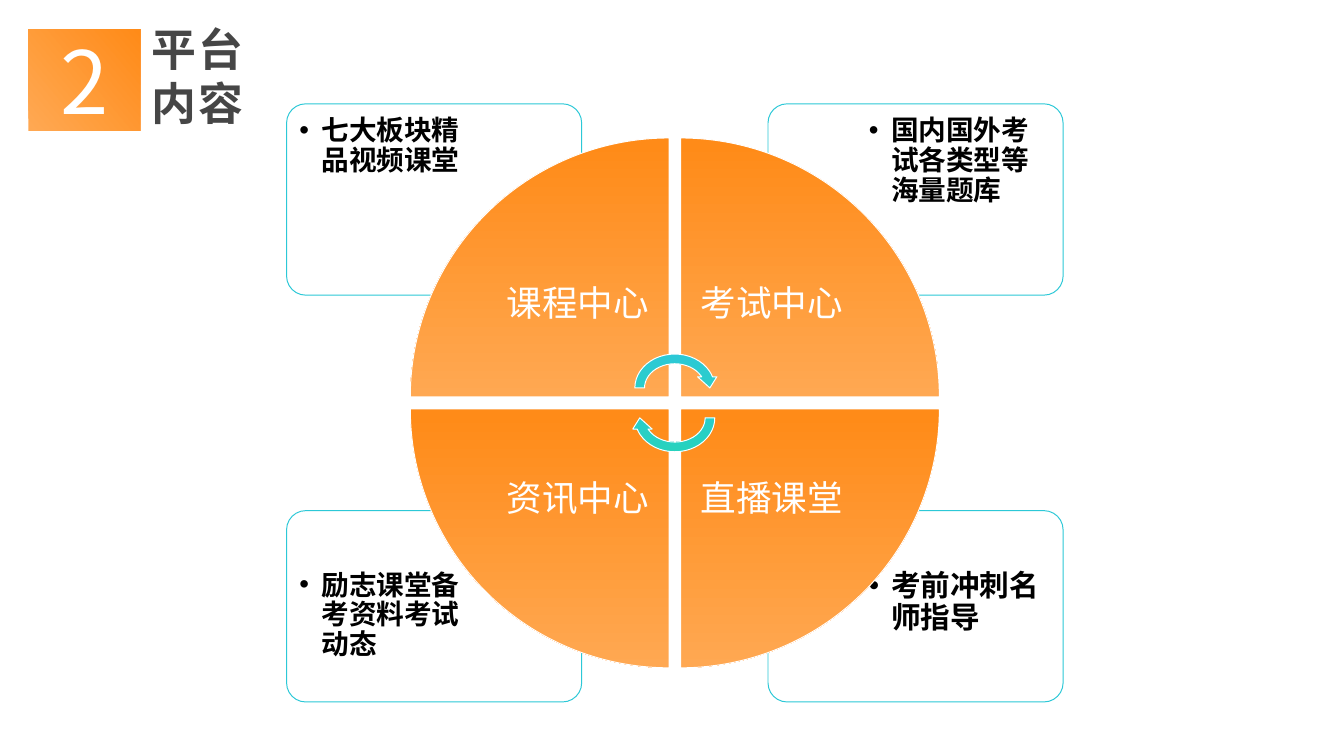
from dataclasses import dataclass
from itertools import product

from lxml import etree
from pptx import Presentation
from pptx.dml.color import RGBColor
from pptx.enum import shapes, text
from pptx.oxml import ns
from pptx.util import Inches, Pt


@dataclass(frozen=True)
class Theme:
    font: str = "Noto Sans CJK SC"
    white: str = "FFFFFF"
    black: str = "000000"
    heading: str = "464646"
    teal: str = "2CC8D7"
    green: str = "26D3BC"
    orange: str = "FF8B18"
    apricot: str = "FFA852"
    title_size: float = 45.4
    number_size: float = 88
    label_size: float = 36
    list_size: float = 28
    large_list_size: float = 30


THEME = Theme()
DOWN = 270
UP_RIGHT = 40
CARD_LEFTS, CARD_TOPS = (4.03, 10.8), (1.46, 7.18)
LIST_SHIFT_X, LIST_SHIFT_Y = (0.06, 1.3), (0.06, 0.73)
WEDGE_LEFTS, WEDGE_TOPS = (5.77, 9.57), (1.94, 5.75)
LABEL_SHIFT = (1.07, 0)
QUADRANTS = {
    (0, 0): ("课程中心", "七大板块精品视频课堂", THEME.list_size, 0),
    (0, 1): ("考试中心", "国内国外考试各类型等海量题库", THEME.list_size, 90),
    (1, 0): ("资讯中心", "励志课堂备考资料考试动态", THEME.list_size, 270),
    (1, 1): ("直播课堂", "考前冲刺名师指导", THEME.large_list_size, 180),
}


def apply(target, values):
    for name, value in values.items():
        setattr(target, name, value)


def place(shape, left, top, width, height):
    apply(shape, {"left": Inches(left), "top": Inches(top),
                  "width": Inches(width), "height": Inches(height)})


def write(shape, wording, size, color, insets, bold=False, line_spacing=1.0,
          align=text.PP_ALIGN.LEFT, anchor=text.MSO_ANCHOR.TOP, bullet=False):
    frame = shape.text_frame
    horizontal, vertical = (Inches(inset) for inset in insets)
    apply(frame, {"word_wrap": True, "auto_size": text.MSO_AUTO_SIZE.NONE,
                  "vertical_anchor": anchor,
                  "margin_left": horizontal, "margin_right": horizontal,
                  "margin_top": vertical, "margin_bottom": vertical})
    paragraph = frame.paragraphs[0]
    if bullet:
        add_bullet(paragraph)
    apply(paragraph, {"alignment": align, "line_spacing": line_spacing,
                      "space_before": Pt(0)})
    run = paragraph.add_run()
    run.text = wording
    apply(run.font, {"size": Pt(size), "bold": bold, "name": THEME.font})
    run.font.color.rgb = RGBColor.from_string(color)
    east_asian = etree.SubElement(run._r.get_or_add_rPr(), ns.qn("a:ea"))
    east_asian.set("typeface", THEME.font)
    return run


def add_bullet(paragraph):
    properties = paragraph._p.get_or_add_pPr()
    properties.set("marL", str(Inches(0.31)))
    properties.set("indent", str(-Inches(0.31)))
    etree.SubElement(properties, ns.qn("a:buFont")).set("typeface", "Arial")
    etree.SubElement(properties, ns.qn("a:buChar")).set("char", "•")


def add_preset(slide, preset, box, line=None, rotation=0):
    shape = slide.shapes.add_shape(preset, *map(Inches, box))
    shape.shadow.inherit = False
    shape.rotation = rotation
    if line:
        shape.line.color.rgb = RGBColor.from_string(line)
        shape.line.width = Pt(1)
    else:
        shape.line.fill.background()
    return shape


def fill_gradient(shape, colors, angle):
    shape.fill.gradient()
    shape.fill.gradient_angle = angle
    for stop, color, position in zip(shape.fill.gradient_stops, colors, (0.02, 1)):
        stop.color.rgb = RGBColor.from_string(color)
        stop.position = position
    shape._element.spPr.find(ns.qn("a:gradFill")).set("rotWithShape", "0")


def add_card(slide, placeholder, row, column):
    _, wording, size, _ = QUADRANTS[row, column]
    left, top = CARD_LEFTS[column], CARD_TOPS[row]
    card = add_preset(slide, shapes.MSO_SHAPE.ROUNDED_RECTANGLE,
                      (left, top, 4.15, 2.69), THEME.teal)
    card.adjustments[0] = 0.1
    card.fill.solid()
    card.fill.fore_color.rgb = RGBColor.from_string(THEME.white)
    place(placeholder, left + LIST_SHIFT_X[column], top + LIST_SHIFT_Y[row], 2.79, 1.9)
    write(placeholder, wording, size, THEME.black, (0.12, 0.12), bold=True,
          line_spacing=0.9, bullet=True)
    slide.shapes._spTree.append(placeholder._element)


def add_wedge(slide, row, column):
    wording, _, _, rotation = QUADRANTS[row, column]
    left, top = WEDGE_LEFTS[column], WEDGE_TOPS[row]
    wedge = add_preset(slide, shapes.MSO_SHAPE.PIE_WEDGE,
                       (left, top, 3.64, 3.64), THEME.white, rotation)
    fill_gradient(wedge, (THEME.orange, THEME.apricot), DOWN)
    label = slide.shapes.add_textbox(
        Inches(left + LABEL_SHIFT[column]), Inches(top + LABEL_SHIFT[row]),
        Inches(2.57), Inches(2.57))
    write(label, wording, THEME.label_size, THEME.white, (0.28, 0.28),
          line_spacing=0.9, align=text.PP_ALIGN.CENTER,
          anchor=text.MSO_ANCHOR.MIDDLE)


def add_cycle_arrow(slide, top, rotation):
    arrow = add_preset(slide, shapes.MSO_SHAPE.CIRCULAR_ARROW,
                       (8.86, top, 1.26, 1.09), THEME.white, rotation)
    fill_gradient(arrow, (THEME.teal, THEME.green), DOWN)


def add_heading(slide):
    title = slide.shapes.title
    place(title, 1.97, 0.22, 2.09, 1.69)
    run = write(title, "平台内容", THEME.title_size, THEME.heading,
                (0.16, 0.08), bold=True)
    run._r.get_or_add_rPr().set("spc", "240")
    number = add_preset(slide, shapes.MSO_SHAPE.RECTANGLE, (0.4, 0.41, 1.57, 1.43))
    fill_gradient(number, (THEME.apricot, THEME.orange), UP_RIGHT)
    write(number, "2", THEME.number_size, THEME.white, (0.09, 0.04),
          align=text.PP_ALIGN.CENTER, anchor=text.MSO_ANCHOR.MIDDLE)


def main():
    deck = Presentation()
    apply(deck, {"slide_width": Inches(18.9), "slide_height": Inches(10.63)})
    slide = deck.slides.add_slide(deck.slide_layouts.get_by_name("Comparison"))
    lists = [item for item in slide.placeholders if item.placeholder_format.idx]
    cells = list(product(range(2), repeat=2))
    for placeholder, cell in zip(lists, cells):
        add_card(slide, placeholder, *cell)
    for cell in cells:
        add_wedge(slide, *cell)
    for top, rotation in ((4.91, 0), (5.33, 180)):
        add_cycle_arrow(slide, top, rotation)
    add_heading(slide)
    deck.save("out.pptx")


if __name__ == "__main__":
    main()
